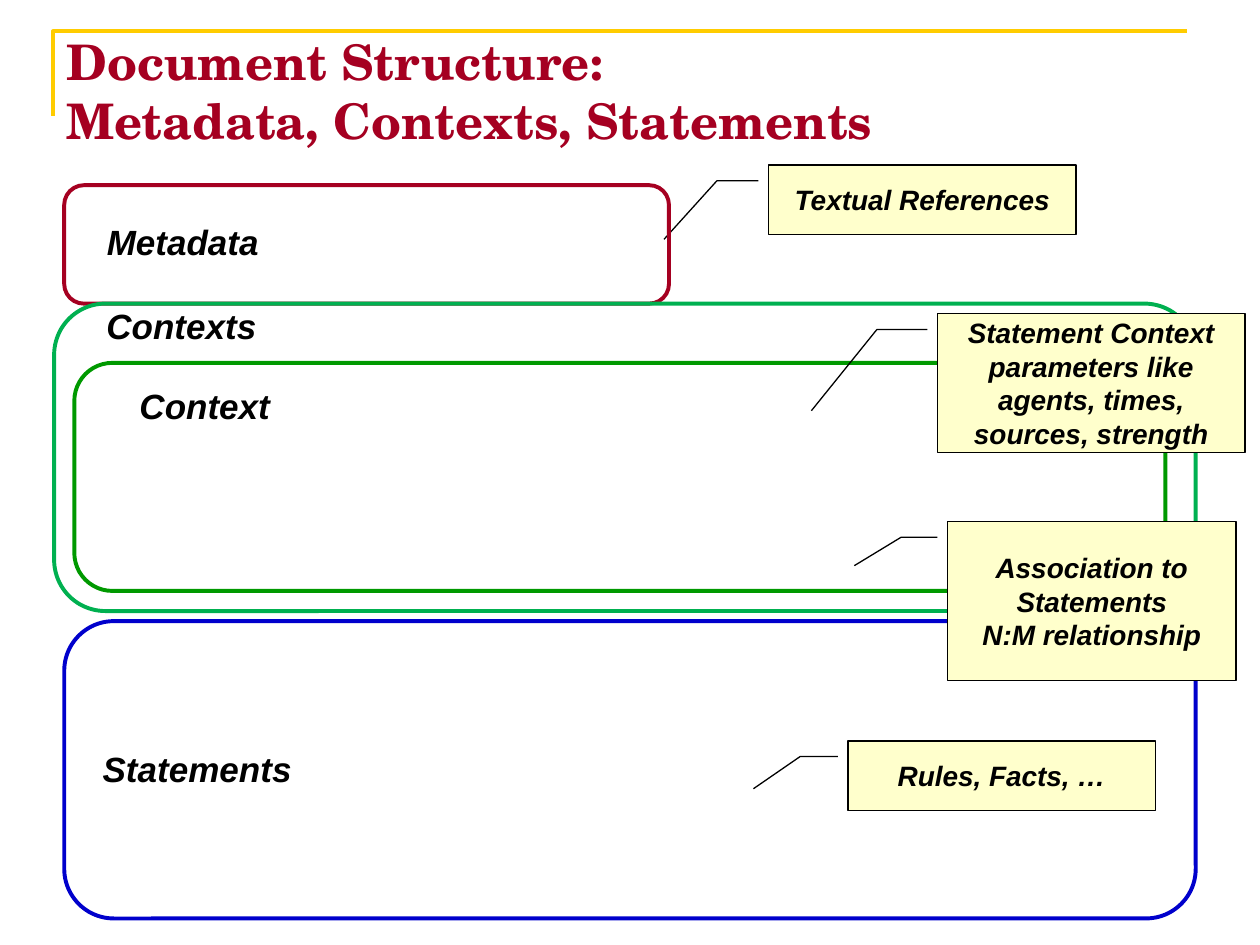
from pptx import Presentation
from pptx.dml.color import RGBColor
from pptx.enum.shapes import MSO_SHAPE
from pptx.enum.text import MSO_ANCHOR, MSO_AUTO_SIZE, PP_ALIGN
from pptx.util import Inches, Pt

COLORS = {
    "background": "FFFFFF",
    "corner": "FFCC00",
    "title": "A50021",
    "metadata": "A50021",
    "contexts": "00B050",
    "context": "009900",
    "statements": "0000CC",
    "note": "FFFFCC",
    "ink": "000000",
}

# Name, box (left, top, width, height)
METADATA_FRAME = ("metadata", (0.51, 1.47, 4.8, 0.94))
LOWER_FRAMES = [
    ("contexts", (0.43, 2.41, 9.06, 2.44)),
    ("context", (0.59, 2.88, 8.66, 1.81)),
    ("statements", (0.51, 4.93, 8.98, 2.36)),
]

# Lines, box, distance of elbow left of box, tip left of and below the box corner
METADATA_NOTE = (["Textual References"], (6.1, 1.31, 2.44, 0.55), 0.41, (0.83, 0.59))
LOWER_NOTES = [
    (["Statement Context parameters like agents, times, sources, strength"],
     (7.44, 2.49, 2.44, 1.1), 0.48, (1.0, 0.77)),
    (["Association to Statements", "N:M relationship"],
     (7.52, 4.14, 2.29, 1.26), 0.37, (0.74, 0.35)),
    (["Rules, Facts, …"], (6.73, 5.88, 2.44, 0.55), 0.38, (0.75, 0.38)),
]

LABELS = [
    ("Metadata", (0.74, 1.7, 1.42, 0.44)),
    ("Contexts", (0.74, 2.37, 1.4, 0.44)),
    ("Statements", (0.71, 5.88, 1.71, 0.44)),
    ("Context", (1, 3, 1.25, 0.44)),
]


def color(name):
    return RGBColor.from_string(COLORS[name])


def to_inches(box):
    return [Inches(length) for length in box]


def style_outline(shape, line, width, fill=None):
    shape.shadow.inherit = False
    shape.line.color.rgb = color(line)
    shape.line.width = Pt(width)
    if fill:
        shape.fill.solid()
        shape.fill.fore_color.rgb = color(fill)
    else:
        shape.fill.background()


def add_run(paragraph, text, size, font="Arial", ink="ink", italic=True):
    run = paragraph.add_run()
    run.text = text
    run.font.name = font
    run.font.size = Pt(size)
    run.font.bold = True
    run.font.italic = italic
    run.font.color.rgb = color(ink)


def add_corner(slide, box):
    """Draw the open line along the left and top edges of the box."""
    left, top, width, height = to_inches(box)
    builder = slide.shapes.build_freeform(left, top + height)
    builder.add_line_segments([(left, top), (left + width, top)], close=False)
    style_outline(builder.convert_to_shape(), "corner", 2.25)


def add_title(slide, box, lines):
    frame = slide.shapes.add_textbox(*to_inches(box)).text_frame
    frame.word_wrap = True
    frame.vertical_anchor = MSO_ANCHOR.MIDDLE
    paragraph = frame.paragraphs[0]
    for index, line in enumerate(lines):
        if index:
            paragraph.add_line_break()
        add_run(paragraph, line, 28, "TeX Gyre Schola", "title", italic=False)


def add_frame(slide, name, box):
    shape = slide.shapes.add_shape(MSO_SHAPE.ROUNDED_RECTANGLE, *to_inches(box))
    style_outline(shape, name, 2.25)


def add_note(slide, lines, box, elbow, tip):
    """Add a callout whose leader runs left, then bends down to its tip."""
    shape = slide.shapes.add_shape(MSO_SHAPE.LINE_CALLOUT_2, *to_inches(box))
    style_outline(shape, "ink", 0.75, fill="note")
    width, height = box[2:]
    tip_left, tip_down = tip
    leader = [(0.08, 0.125), (elbow, 0.125), (tip_left, tip_down)]
    for index, (left, down) in enumerate(leader):
        shape.adjustments[2 * index] = down / height
        shape.adjustments[2 * index + 1] = -left / width
    frame = shape.text_frame
    frame.word_wrap = True
    frame.vertical_anchor = MSO_ANCHOR.MIDDLE
    for index, line in enumerate(lines):
        paragraph = frame.add_paragraph() if index else frame.paragraphs[0]
        paragraph.alignment = PP_ALIGN.CENTER
        add_run(paragraph, line, 16)


def add_label(slide, text, box):
    frame = slide.shapes.add_textbox(*to_inches(box)).text_frame
    frame.word_wrap = False
    frame.auto_size = MSO_AUTO_SIZE.SHAPE_TO_FIT_TEXT
    paragraph = frame.paragraphs[0]
    paragraph.alignment = PP_ALIGN.CENTER
    add_run(paragraph, text, 20)


def main():
    presentation = Presentation()
    presentation.slide_width = Inches(10)
    presentation.slide_height = Inches(7.5)
    slide = presentation.slides.add_slide(presentation.slide_layouts[6])
    slide.background.fill.solid()
    slide.background.fill.fore_color.rgb = color("background")

    add_corner(slide, (0.42, 0.25, 9, 0.67))
    add_title(slide, (0.43, 0, 9, 1.44),
              ["Document Structure:", "Metadata, Contexts, Statements"])
    add_note(slide, *METADATA_NOTE)
    for frame in [METADATA_FRAME, *LOWER_FRAMES]:
        add_frame(slide, *frame)
    for note in LOWER_NOTES:
        add_note(slide, *note)
    for label in LABELS:
        add_label(slide, *label)

    presentation.save("out.pptx")


if __name__ == "__main__":
    main()
